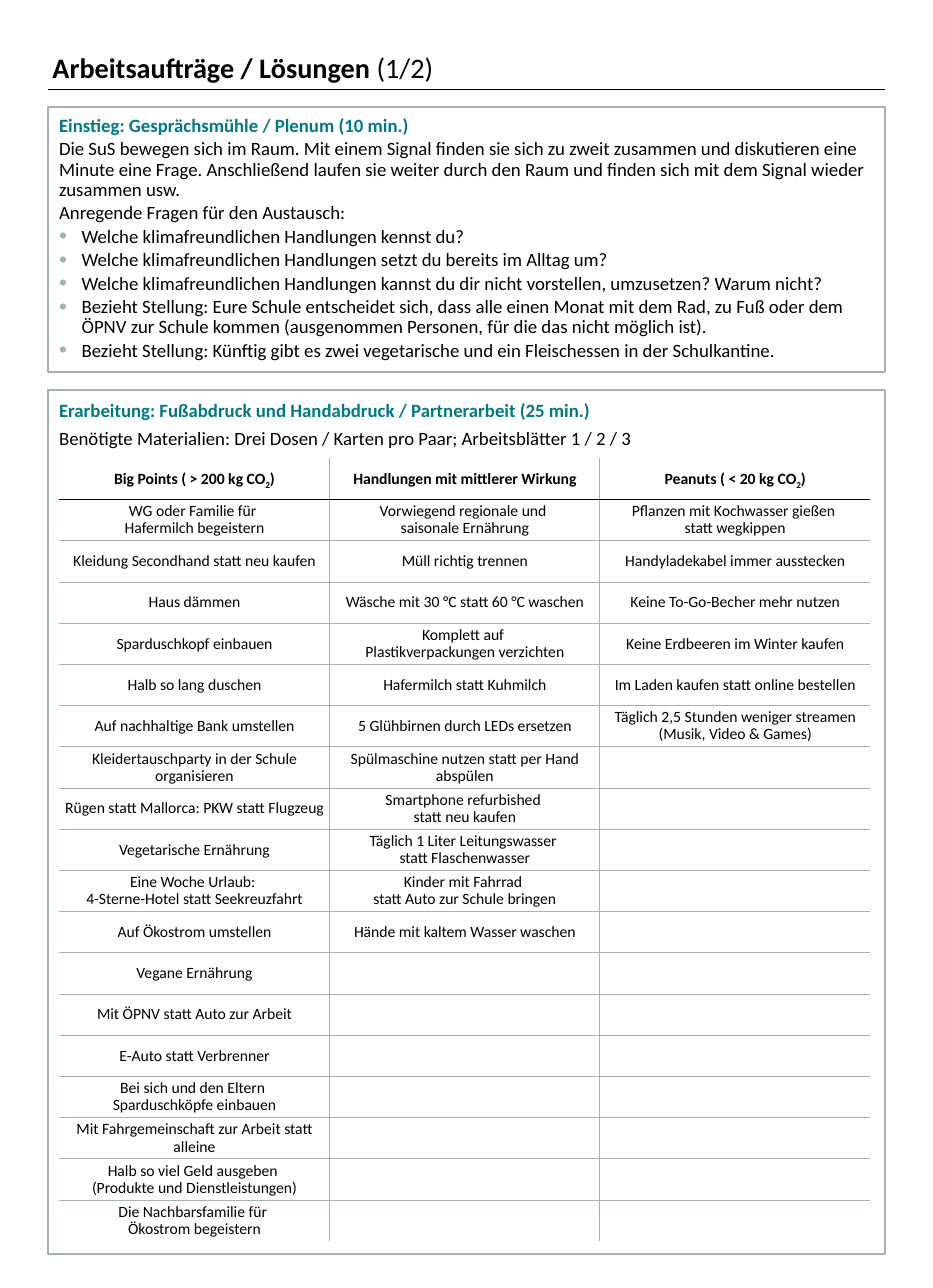
from lxml.etree import SubElement as Sub
from pptx import Presentation
from pptx.dml.color import RGBColor as RGB
from pptx.enum.shapes import MSO_SHAPE as Kind
from pptx.enum.text import MSO_ANCHOR as Anchor, PP_ALIGN as Align
from pptx.oxml.ns import qn
from pptx.util import Pt

PX = 4572  # 200 px to the inch
LEFT, WIDE = 85, 1484
HUES = {"text": "000000", "head": "007987", "line": "A3B1B5"}

INTRO_HEAD = "Einstieg: Gesprächsmühle / Plenum (10 min.)"
INTRO = [
    "Die SuS bewegen sich im Raum. Mit einem Signal finden sie sich zu zweit zusammen und "
    "diskutieren eine Minute eine Frage. Anschließend laufen sie weiter durch den Raum und "
    "finden sich mit dem Signal wieder zusammen usw.",
    "Anregende Fragen für den Austausch:",
]
ASKS = [
    "Welche klimafreundlichen Handlungen kennst du?",
    "Welche klimafreundlichen Handlungen setzt du bereits im Alltag um?",
    "Welche klimafreundlichen Handlungen kannst du dir nicht vorstellen, umzusetzen? "
    "Warum nicht?",
    "Bezieht Stellung: Eure Schule entscheidet sich, dass alle einen Monat mit dem Rad, zu Fuß "
    "oder dem ÖPNV zur Schule kommen (ausgenommen Personen, für die das nicht möglich ist).",
    "Bezieht Stellung: Künftig gibt es zwei vegetarische und ein Fleischessen in der "
    "Schulkantine.",
]
WORK_HEAD = "Erarbeitung: Fußabdruck und Handabdruck / Partnerarbeit (25 min.)"
WORK = ["Benötigte Materialien: Drei Dosen / Karten pro Paar; Arbeitsblätter 1 / 2 / 3"]

HEADS = [
    ["Big Points ( > 200 kg CO", "2", ")"],
    ["Handlungen mit mittlerer Wirkung"],
    ["Peanuts ( < 20 kg CO", "2", ")"],
]
ACTS = [
    [
        "WG oder Familie für \nHafermilch begeistern",
        "Kleidung Secondhand statt neu kaufen",
        "Haus dämmen",
        "Sparduschkopf einbauen",
        "Halb so lang duschen",
        "Auf nachhaltige Bank umstellen",
        "Kleidertauschparty in der Schule organisieren",
        "Rügen statt Mallorca: PKW statt Flugzeug",
        "Vegetarische Ernährung",
        "Eine Woche Urlaub: \n4-Sterne-Hotel statt Seekreuzfahrt",
        "Auf Ökostrom umstellen",
        "Vegane Ernährung",
        "Mit ÖPNV statt Auto zur Arbeit",
        "E-Auto statt Verbrenner",
        "Bei sich und den Eltern \nSparduschköpfe einbauen",
        "Mit Fahrgemeinschaft zur Arbeit statt alleine",
        "Halb so viel Geld ausgeben \n(Produkte und Dienstleistungen)",
        "Die Nachbarsfamilie für \nÖkostrom begeistern",
    ],
    [
        "Vorwiegend regionale und \nsaisonale Ernährung",
        "Müll richtig trennen",
        "Wäsche mit 30 °C statt 60 °C waschen",
        "Komplett auf \nPlastikverpackungen verzichten",
        "Hafermilch statt Kuhmilch",
        "5 Glühbirnen durch LEDs ersetzen",
        "Spülmaschine nutzen statt per Hand abspülen",
        "Smartphone refurbished \nstatt neu kaufen",
        "Täglich 1 Liter Leitungswasser \nstatt Flaschenwasser",
        "Kinder mit Fahrrad \nstatt Auto zur Schule bringen",
        "Hände mit kaltem Wasser waschen",
    ],
    [
        "Pflanzen mit Kochwasser gießen \nstatt wegkippen",
        "Handyladekabel immer ausstecken",
        "Keine To-Go-Becher mehr nutzen",
        "Keine Erdbeeren im Winter kaufen",
        "Im Laden kaufen statt online bestellen",
        "Täglich 2,5 Stunden weniger streamen (Musik, Video & Games)",
    ],
]


def add_run(para, text, size, hue="text", bold=False):
    run = para.add_run()
    run.text = text
    font = run.font
    font.name, font.size, font.bold = "Calibri", Pt(size), bold
    font.color.rgb = RGB.from_string(HUES[hue])
    return run


def set_pads(box, side, top):
    box.margin_left = box.margin_right = side * PX
    box.margin_top = box.margin_bottom = top * PX


def add_bullet(para):
    props = para._p.get_or_add_pPr()
    props.set("marL", str(40 * PX))
    props.set("indent", str(-40 * PX))
    Sub(Sub(props, qn("a:buClr")), qn("a:srgbClr"), val=HUES["line"])
    Sub(props, qn("a:buSzPct"), val="120000")
    Sub(props, qn("a:buFont"), typeface="Arial")
    Sub(props, qn("a:buChar"), char="•")


def add_box(slide, top, height, head, lines, asks, lead, after):
    """Add a framed box: a heading, plain lines, then bulleted questions."""
    box = slide.shapes.add_shape(Kind.RECTANGLE, LEFT * PX, top * PX, WIDE * PX, height * PX)
    box.shadow.inherit = False
    box.fill.background()
    box.line.color.rgb = RGB.from_string(HUES["line"])
    box.line.width = Pt(1)
    frame = box.text_frame
    frame.word_wrap, frame.vertical_anchor = True, Anchor.TOP
    set_pads(frame, 20, 16)
    for i, text in enumerate([head, *lines, *asks]):
        para = frame.add_paragraph() if i else frame.paragraphs[0]
        if i > len(lines):
            add_bullet(para)
        para.alignment = Align.LEFT
        para.line_spacing, para.space_after = lead, Pt(after)
        add_run(para, text, 12, "text" if i else "head", bold=not i)


def add_table(slide, rows, cols, left, top, width, height):
    """Add a plain table with equal rows and columns."""
    table = slide.shapes.add_table(
        rows, cols, left * PX, top * PX, width * PX, height * PX).table
    table.first_row = table.horz_banding = False
    for col in table.columns:
        col.width = width * PX // cols
    for row in table.rows:
        row.height = height * PX // rows
    return table


def set_edges(cell, **hues):
    """Draw the borders named L, R, T and B; clear those left out."""
    for side in "LRTB":
        edge = Sub(cell._tc.get_or_add_tcPr(), qn("a:ln" + side), w=str(Pt(0.75)))
        hue = hues.get(side)
        if hue:
            Sub(Sub(edge, qn("a:solidFill")), qn("a:srgbClr"), val=HUES[hue])
        else:
            Sub(edge, qn("a:noFill"))
    cell.fill.background()


def add_title(slide):
    cell = add_table(slide, 1, 1, LEFT, 88, WIDE, 70).cell(0, 0)
    set_edges(cell, B="text")
    set_pads(cell, 8, 8)
    para = cell.text_frame.paragraphs[0]
    para.line_spacing = 0.9
    add_run(para, "Arbeitsaufträge / Lösungen ", 18, bold=True)
    add_run(para, "(1/2)", 18)


def fill_cell(cell, parts, bold):
    """Write the parts as runs; every second one is a subscript."""
    cell.vertical_anchor = Anchor.MIDDLE
    set_pads(cell, 8, 4)
    para = cell.text_frame.paragraphs[0]
    para.alignment, para.line_spacing = Align.CENTER, 0.9
    para.font.size = Pt(10)
    for i, part in enumerate(parts):
        for j, line in enumerate(part.split("\n")):
            if j:
                para.add_line_break()
            run = add_run(para, line, 10, bold=bold)
            if i % 2:
                run._r.get_or_add_rPr().set("baseline", "-25000")


def add_grid(slide):
    rows, cols = 1 + max(map(len, ACTS)), len(HEADS)
    table = add_table(slide, rows, cols, 105, 813, 1438, 1389)
    for c, acts in enumerate(ACTS):
        texts = [HEADS[c]] + [[act] for act in acts]
        for r in range(rows):
            cell = table.cell(r, c)
            hues = {}
            if c:
                hues["L"] = "line"
            if c < cols - 1:
                hues["R"] = "line"
            if r:
                hues["T"] = "text" if r == 1 else "line"
            if r < rows - 1:
                hues["B"] = "line" if r else "text"
            set_edges(cell, **hues)
            fill_cell(cell, texts[r] if r < len(texts) else [], bold=not r)


def main():
    deck = Presentation()
    deck.slide_width, deck.slide_height = 1654 * PX, 2284 * PX
    slide = deck.slides.add_slide(deck.slide_layouts[6])
    add_title(slide)
    add_box(slide, 190, 470, INTRO_HEAD, INTRO, ASKS, 0.9, 2)
    add_box(slide, 692, 1532, WORK_HEAD, WORK, [], 1.0, 3)
    add_grid(slide)
    deck.save("out.pptx")


if __name__ == "__main__":
    main()
